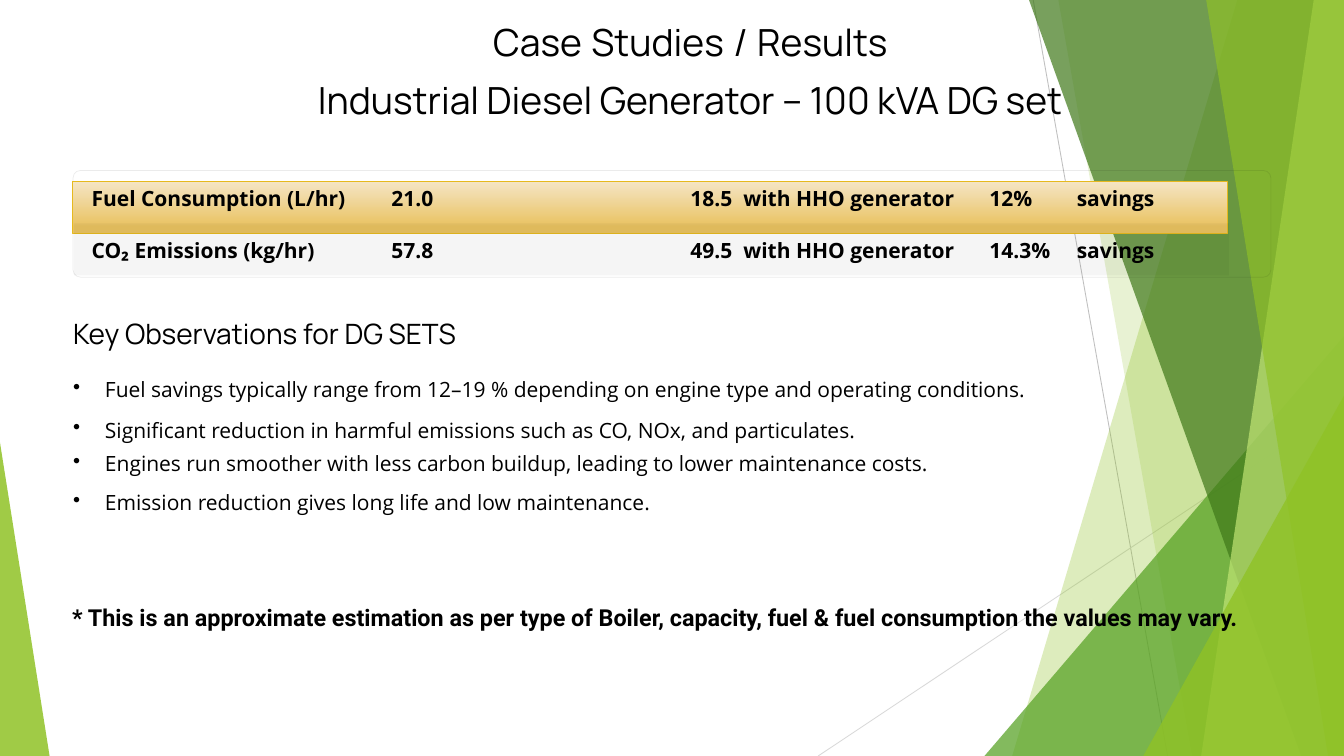
from dataclasses import dataclass
from typing import Optional

from lxml.etree import SubElement
from pptx import Presentation
from pptx.dml.color import RGBColor
from pptx.enum.shapes import MSO_CONNECTOR, MSO_SHAPE
from pptx.enum.text import PP_ALIGN
from pptx.oxml.ns import qn
from pptx.util import Cm, Pt


@dataclass(frozen=True)
class Theme:
    ink: str = "000000"
    lime: str = "90C226"
    green: str = "54A021"
    forest: str = "3F7819"
    pale_lime: str = "C0E474"
    gold_light: str = "F5E5C5"
    gold: str = "E9C260"
    gold_line: str = "E6B91E"
    heading_font: str = "Manrope"
    body_font: str = "Open Sans"
    note_font: str = "Roboto"
    title_size: int = 32
    title_space_size: int = 40
    heading_size: int = 24
    body_size: int = 18
    note_size: int = 20
    body_leading: int = 25


@dataclass(frozen=True)
class Ray:
    """Straight line; coordinates in inches."""
    start: tuple[float, float]
    end: tuple[float, float]
    color: str


@dataclass(frozen=True)
class Facet:
    """Translucent band from the top edge to the bottom edge, flush right."""
    top_left: float
    bottom_left: float
    color: str
    opacity: int


@dataclass(frozen=True)
class Corner:
    """Translucent right triangle; apex 0 is its left side, 1 its right."""
    frame: tuple[float, float, float, float]
    apex: int
    color: str
    opacity: int


@dataclass(frozen=True)
class Bullet:
    text: str
    space_before: float


THEME = Theme()
WIDTH, HEIGHT = 16, 9
RAYS = [Ray((12.3, 0), (13.9, 9), "BFBFBF"), Ray((16, 4.83), (9.74, 9), "D9D9D9")]
DECORATION = [
    Facet(14.73, 12.05, THEME.lime, 30),
    Facet(12.6, 14.19, THEME.lime, 20),
    Corner((11.72, 4, 4.28, 5), 1, THEME.green, 72),
    Facet(12.25, 15.49, THEME.forest, 70),
    Facet(15.64, 14.3, THEME.pale_lime, 70),
    Facet(14.36, 15.81, THEME.lime, 65),
    Corner((13.61, 4.71, 2.39, 4.29), 1, THEME.lime, 80),
    Corner((0, 5.27, 0.59, 3.73), 0, THEME.lime, 85),
]
TITLE = ["Case Studies / Results", "Industrial Diesel Generator – 100 kVA DG set"]
RESULTS = [
    ("Fuel Consumption (L/hr)", "21.0", "18.5", "with HHO generator", "12%", "savings"),
    ("CO₂ Emissions (kg/hr)", "57.8", "49.5", "with HHO generator", "14.3%", "savings"),
]
COLUMN_EDGES = [1.09, 4.66, 8.22, 8.85, 11.78, 12.82, 14.62]
ROW_HEIGHTS = [0.62, 0.48]
BULLETS = [
    Bullet("Fuel savings typically range from 12–19 % depending on engine type and operating conditions.", 0),
    Bullet("Significant reduction in harmful emissions such as CO, NOx, and particulates.", 9.6),
    Bullet("Engines run smoother with less carbon buildup, leading to lower maintenance costs.", 3.8),
    Bullet("Emission reduction gives long life and low maintenance.", 8.1),
]
NOTE = ("* This is an approximate estimation as per type of Boiler, capacity, "
        "fuel & fuel consumption the values may vary.")


def inch(value: float) -> Cm:
    return Cm(value * 2.54)


def set_opacity(fill_or_line, percent: int) -> None:
    """Add alpha to the solid colour inside a shape's properties or line."""
    color = fill_or_line.find(qn("a:solidFill"))[0]
    SubElement(color, qn("a:alpha"), val=str(percent * 1000))


def paint(shape, color: str, opacity: int) -> None:
    shape.shadow.inherit = False
    shape.line.fill.background()
    shape.fill.solid()
    shape.fill.fore_color.rgb = RGBColor.from_string(color)
    set_opacity(shape._element.spPr, opacity)


def add_preset(page, kind, frame):
    shape = page.shapes.add_shape(kind, *map(inch, frame))
    shape.shadow.inherit = False
    return shape


def draw_ray(page, ray: Ray) -> None:
    line = page.shapes.add_connector(MSO_CONNECTOR.STRAIGHT, *map(inch, ray.start + ray.end))
    line.line.color.rgb = RGBColor.from_string(ray.color)
    line.line.width = Pt(0.75)
    SubElement(line._element.spPr, qn("a:effectLst"))


def draw_decoration(page, item: Facet | Corner) -> None:
    if isinstance(item, Corner):
        shape = add_preset(page, MSO_SHAPE.ISOSCELES_TRIANGLE, item.frame)
        shape.adjustments[0] = item.apex
    else:
        builder = page.shapes.build_freeform(inch(item.top_left), 0)
        corners = [(WIDTH, 0), (WIDTH, HEIGHT), (item.bottom_left, HEIGHT)]
        builder.add_line_segments([(inch(x), inch(y)) for x, y in corners])
        shape = builder.convert_to_shape()
    paint(shape, item.color, item.opacity)


def add_text_frame(page, left: float, top: float, width: float, height: float):
    frame = page.shapes.add_textbox(*map(inch, (left, top, width, height))).text_frame
    frame.word_wrap = True
    frame.margin_left = frame.margin_right = frame.margin_top = frame.margin_bottom = 0
    return frame


def style(para, font: str, size: int, leading: float, bold: bool = False,
          align: Optional[PP_ALIGN] = None) -> None:
    para.font.name, para.font.size, para.font.bold = font, Pt(size), bold
    para.font.color.rgb = RGBColor.from_string(THEME.ink)
    para.line_spacing = Pt(leading)
    para.alignment = align


def draw_title(page) -> None:
    """Centre the title lines; the first has wider gaps between its words."""
    frame = add_text_frame(page, 1.09, 0.11, 14.26, 1.36)
    first, second = frame.paragraphs[0], frame.add_paragraph()
    for index, word in enumerate(TITLE[0].split()):
        if index:
            gap = first.add_run()
            gap.text = " "
            gap.font.size = Pt(THEME.title_space_size)
        first.add_run().text = word
    second.text = TITLE[1]
    for para in frame.paragraphs:
        style(para, THEME.heading_font, THEME.title_size, 48.5, align=PP_ALIGN.CENTER)


def draw_result_bands(page) -> None:
    outline = add_preset(page, MSO_SHAPE.ROUNDED_RECTANGLE, (0.87, 2.03, 14.26, 1.27))
    outline.adjustments[0] = 0.07
    outline.fill.background()
    outline.line.color.rgb = RGBColor.from_string(THEME.ink)
    outline.line.width = Pt(0.6)
    set_opacity(outline.line._ln, 8)

    gold = add_preset(page, MSO_SHAPE.RECTANGLE, (0.86, 2.16, 13.75, 0.62))
    gold.fill.gradient()
    gold.fill.gradient_angle = 270
    stops = [(0, THEME.gold_light), (0.88, THEME.gold)]
    for stop, (position, color) in zip(gold.fill.gradient_stops, stops):
        stop.position = position
        stop.color.rgb = RGBColor.from_string(color)
    gold.line.color.rgb = RGBColor.from_string(THEME.gold_line)
    gold.line.width = Pt(1)

    gray = add_preset(page, MSO_SHAPE.RECTANGLE, (0.88, 2.66, 13.75, 0.62))
    paint(gray, THEME.ink, 4)


def draw_results(page) -> None:
    left, right = COLUMN_EDGES[0], COLUMN_EDGES[-1]
    table = page.shapes.add_table(len(RESULTS), len(RESULTS[0]), inch(left), inch(2.18),
                                  inch(right - left), inch(sum(ROW_HEIGHTS))).table
    table.first_row = table.horz_banding = False
    no_grid = "{2D5ABB26-0587-4C30-8999-92F81FD0307C}"
    table._tbl.tblPr.find(qn("a:tableStyleId")).text = no_grid
    for column, start, end in zip(table.columns, COLUMN_EDGES, COLUMN_EDGES[1:]):
        column.width = inch(end - start)
    for row, height, values in zip(table.rows, ROW_HEIGHTS, RESULTS):
        row.height = inch(height)
        for cell, value in zip(row.cells, values):
            cell.fill.background()
            cell.margin_left = cell.margin_right = cell.margin_top = cell.margin_bottom = 0
            cell.text = value
            style(cell.text_frame.paragraphs[0], THEME.body_font, THEME.body_size,
                  THEME.body_leading, bold=True)


def draw_observations(page) -> None:
    heading = add_text_frame(page, 0.87, 3.83, 6, 0.34).paragraphs[0]
    heading.text = "Key Observations for DG SETS"
    style(heading, THEME.heading_font, THEME.heading_size, 24)

    frame = add_text_frame(page, 0.87, 4.44, 14.26, 1.69)
    for index, bullet in enumerate(BULLETS):
        para = frame.add_paragraph() if index else frame.paragraphs[0]
        para.text = bullet.text
        style(para, THEME.body_font, THEME.body_size, THEME.body_leading)
        para.space_before = Pt(bullet.space_before)
        properties = para._p.get_or_add_pPr()
        properties.set("marL", str(inch(0.38)))
        properties.set("indent", str(-inch(0.38)))
        mark = SubElement(properties, qn("a:buChar"), char="•")
        properties.find(qn("a:defRPr")).addprevious(mark)

    note = add_text_frame(page, 0.86, 7.17, 14.26, 0.35).paragraphs[0]
    note.text = NOTE
    style(note, THEME.note_font, THEME.note_size, THEME.body_leading, bold=True)


def main() -> None:
    deck = Presentation()
    deck.slide_width, deck.slide_height = inch(WIDTH), inch(HEIGHT)
    page = deck.slides.add_slide(deck.slide_layouts[6])
    for ray in RAYS:
        draw_ray(page, ray)
    for item in DECORATION:
        draw_decoration(page, item)
    draw_title(page)
    draw_result_bands(page)
    draw_results(page)
    draw_observations(page)
    deck.save("out.pptx")


if __name__ == "__main__":
    main()
